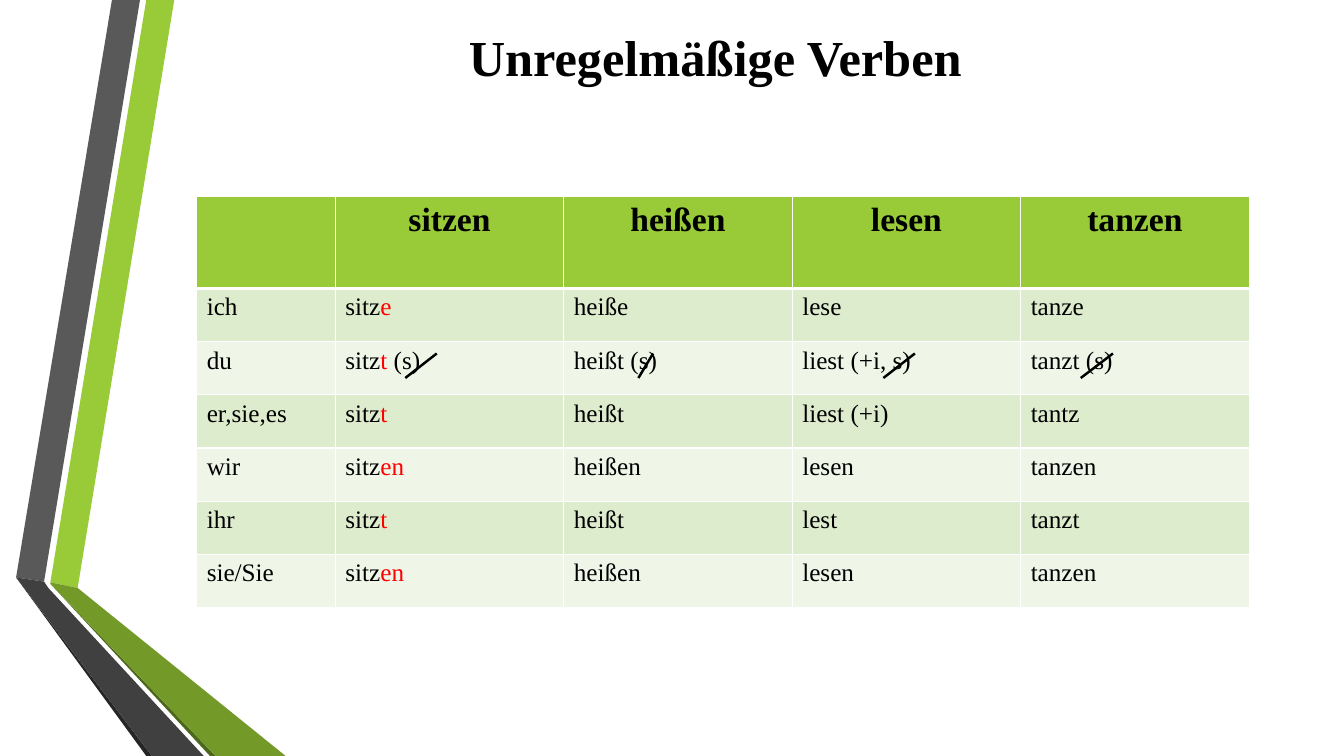
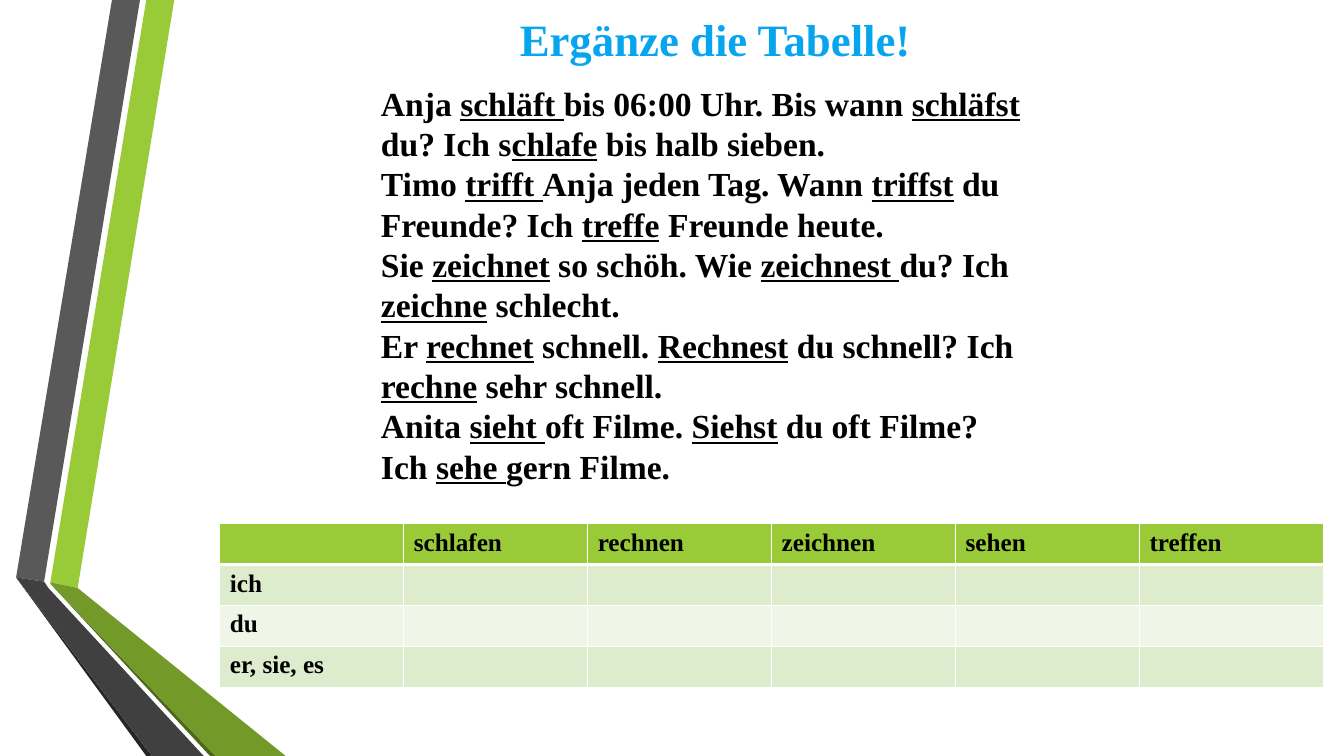
import lxml.etree
import pptx
import pptx.dml.color
import pptx.enum.shapes
import pptx.enum.text
import pptx.oxml.ns
import pptx.util

Pt = pptx.util.Pt
qn = pptx.oxml.ns.qn
ALIGN = pptx.enum.text.PP_ALIGN
FACE = "Times New Roman"
BLACK, WHITE, RED, SKY = "000000", "FFFFFF", "FF0000", "08A5EF"
GREEN = "99CB38"
BANDS = ["DEECCE", "EFF6E8"]
SIDES = ["lnL", "lnR", "lnT", "lnB"]

RIBBONS = [
    (GREEN, [(36, 416), (55.5, 420), (124.5, 0), (104.5, 0)]),
    ("595959", [(100, 0), (80, 0), (11.5, 412.5), (31.5, 415.5)]),
    ("262626", [(11.5, 412.5), (104.5, 540), (108.5, 540)]),
    ("4D671B", [(36, 417), (150, 540), (154, 540)]),
    ("739A28", [(36, 416), (36, 417), (154, 540), (204, 540), (55.5, 420)]),
    ("404040", [(145.5, 540), (34.5, 420), (31.5, 415.5), (11.5, 412.5), (108.5, 540)]),
]

VERBS = [
    ["", "sitzen", "heißen", "lesen", "tanzen"],
    ["ich", "sitz_e", "heiße", "lese", "tanze"],
    ["du", "sitz_t_ (s)", "heißt (s)", "liest (+i, s)", "tanzt (s)"],
    ["er,sie,es", "sitz_t", "heißt", "liest (+i)", "tantz"],
    ["wir", "sitz_en", "heißen", "lesen", "tanzen"],
    ["ihr", "sitz_t", "heißt", "lest", "tanzt"],
    ["sie/Sie", "sitz_en", "heißen", "lesen", "tanzen"],
]

BLANKS = [
    ["", "schlafen", "rechnen", "zeichnen", "sehen", "treffen"],
    ["ich"] + [""] * 5,
    ["du"] + [""] * 5,
    ["er, sie, es"] + [""] * 5,
]

STORY = [
    "Anja _schläft _bis 06:00 Uhr. Bis wann _schläfst_ du? Ich s_chlafe_ bis halb sieben.",
    "Timo _trifft _Anja jeden Tag. Wann _triffst_ du Freunde? Ich _treffe_ Freunde heute.",
    "Sie _zeichnet_ so schöh. Wie _zeichnest _du? Ich _zeichne_ schlecht.",
    "Er _rechnet_ schnell. _Rechnest_ du schnell? Ich _rechne_ sehr schnell.",
    "Anita _sieht _oft Filme. _Siehst_ du oft Filme? Ich _sehe _gern Filme.",
]

PAGES = [
    {
        "title": "Unregelmäßige Verben", "top": 13.5, "tall": 54, "size": 36, "tint": BLACK,
        "grid": VERBS, "left": 140.5, "down": 140.5,
        "cols": [99] + [163.2] * 4, "rows": [65.5] + [38] * 6,
        "head": {"size": Pt(24), "bold": True}, "body": {"size": Pt(18), "bold": False},
        "align": ALIGN.CENTER, "story": [],
        "cuts": [(289.5, 312), (631, 653.5), (456, 466.5), (772, 795)],
    },
    {
        "title": "Ergänze die Tabelle!", "top": 0, "tall": 55.5, "size": 32, "tint": SKY,
        "grid": BLANKS, "left": 157, "down": 374,
        "cols": [131.4] * 6, "rows": [29.2] * 4,
        "head": {"size": Pt(18), "bold": True}, "body": {"size": Pt(18), "bold": True},
        "align": ALIGN.LEFT, "story": STORY, "cuts": [],
    },
]


def hue(code):
    return pptx.dml.color.RGBColor.from_string(code)


def write(para, text, look, tint=BLACK, mark=BLACK, under=False):
    for i, part in enumerate(text.split("_")):
        if not part:
            continue
        run = para.add_run()
        run.text = part
        odd = i % 2 == 1
        style = {"name": FACE, **look, "underline": True if odd and under else None}
        for key, val in style.items():
            setattr(run.font, key, val)
        run.font.color.rgb = hue(mark if odd else tint)


deck = pptx.Presentation()
deck.slide_width = Pt(960)
deck.slide_height = Pt(540)

for page in PAGES:
    slide = deck.slides.add_slide(deck.slide_layouts[6])
    shapes = slide.shapes

    for tint, spots in RIBBONS:
        ends = [(Pt(x), Pt(y)) for x, y in spots]
        pen = shapes.build_freeform(*ends[0])
        pen.add_line_segments(ends[1:], close=True)
        band = pen.convert_to_shape()
        band.shadow.inherit = False
        band.fill.solid()
        band.fill.fore_color.rgb = hue(tint)
        band.line.fill.background()

    box = shapes.add_textbox(Pt(116.5), Pt(page["top"]), Pt(789), Pt(page["tall"]))
    frame = box.text_frame
    frame.word_wrap = True
    frame.vertical_anchor = pptx.enum.text.MSO_ANCHOR.MIDDLE
    para = frame.paragraphs[0]
    para.alignment = ALIGN.CENTER
    write(para, page["title"], {"size": Pt(page["size"]), "bold": True}, page["tint"])

    cols, rows = page["cols"], page["rows"]
    table = shapes.add_table(
        len(rows), len(cols), Pt(page["left"]), Pt(page["down"]), Pt(sum(cols)), Pt(sum(rows))
    ).table
    table.first_row = False
    table.horz_banding = False
    for col, wide in zip(table.columns, cols):
        col.width = Pt(wide)
    for r, words in enumerate(page["grid"]):
        table.rows[r].height = Pt(rows[r])
        for c, word in enumerate(words):
            cell = table.cell(r, c)
            props = cell._tc.get_or_add_tcPr()
            for side in SIDES:
                thick = (r, side) in [(0, "lnB"), (1, "lnT")]
                edge = lxml.etree.SubElement(props, qn("a:" + side), w=str(Pt(3 if thick else 1)))
                paint = lxml.etree.SubElement(edge, qn("a:solidFill"))
                lxml.etree.SubElement(paint, qn("a:srgbClr"), val=WHITE)
            cell.fill.solid()
            cell.fill.fore_color.rgb = hue(BANDS[(r - 1) % 2] if r else GREEN)
            para = cell.text_frame.paragraphs[0]
            para.alignment = ALIGN.LEFT if r else page["align"]
            write(para, word, page["body" if r else "head"], mark=RED)

    for start, end in page["cuts"]:
        line = shapes.add_connector(
            pptx.enum.shapes.MSO_CONNECTOR.STRAIGHT, Pt(start), Pt(270), Pt(end), Pt(252.5)
        )
        line.line.color.rgb = hue(BLACK)
        line.line.width = Pt(1.75)
        lxml.etree.SubElement(line._element.spPr, qn("a:effectLst"))

    if page["story"]:
        frame = shapes.add_textbox(Pt(265), Pt(55.5), Pt(480), Pt(298)).text_frame
        frame.word_wrap = True
        for i, text in enumerate(page["story"]):
            para = frame.add_paragraph() if i else frame.paragraphs[0]
            para.line_spacing = Pt(28.8)
            write(para, text, {"size": Pt(24), "bold": True}, under=True)

deck.save("out.pptx")
